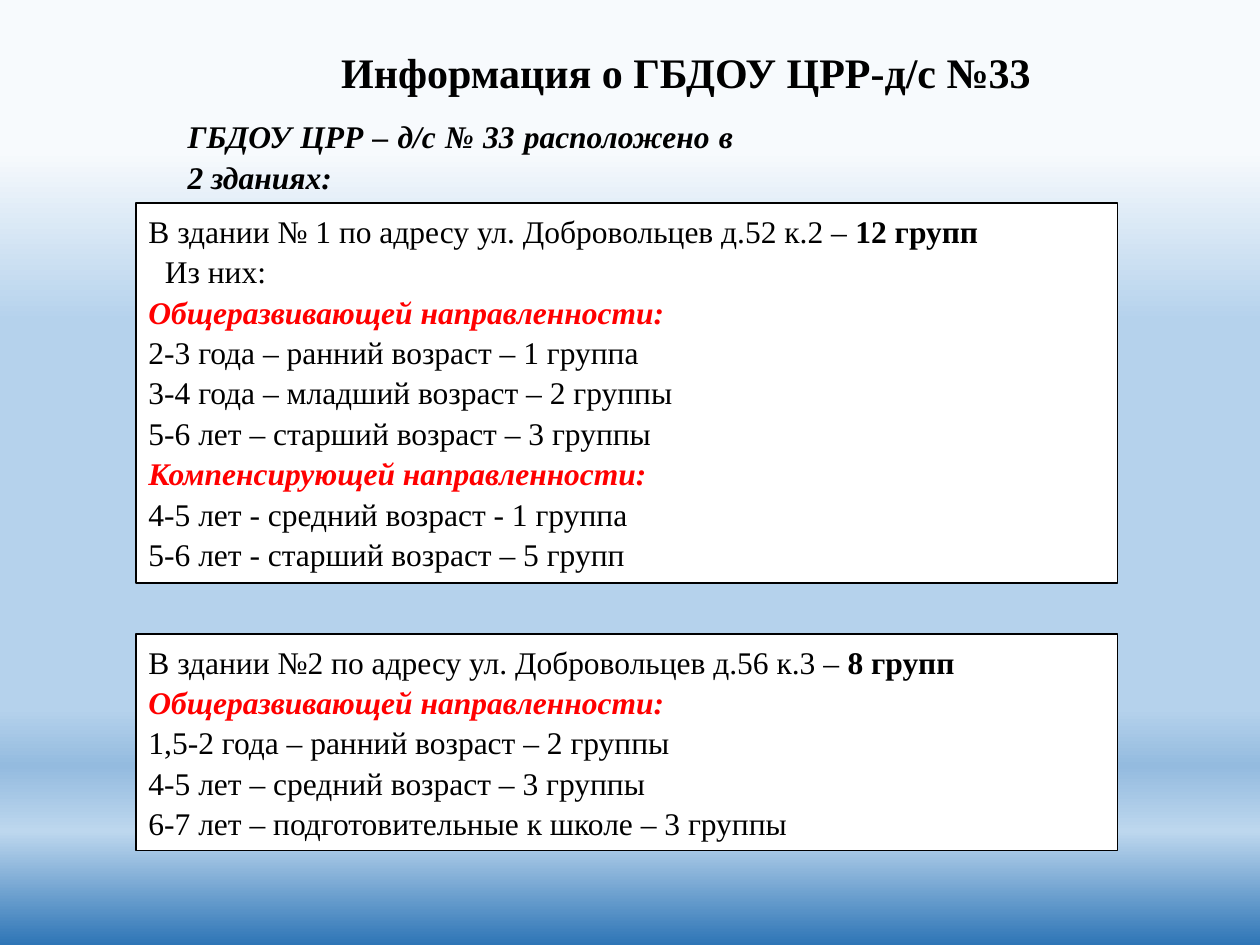
import copy
from dataclasses import dataclass

import pptx
import pptx.dml.color
import pptx.enum.shapes
import pptx.enum.text
import pptx.oxml.ns
import pptx.util

ALIGN = pptx.enum.text.PP_ALIGN


@dataclass(frozen=True)
class Theme:
    font: str = "Times New Roman"
    title: int = 24
    body: int = 18
    spacing: float = 1.07
    ink: str = "000000"
    accent: str = "FF0000"
    paper: str = "FFFFFF"
    sky: tuple = ((16, "F7FAFD"), (34, "B5D2EC"), (75, "B5D2EC"),
                  (81, "94BBDF"), (88, "BDD7EE"), (100, "2E75B6"))


THEME = Theme()
COLS, ROWS = 100, 75

prs = pptx.Presentation()
prs.slide_width = pptx.util.Inches(10)
prs.slide_height = pptx.util.Inches(7.5)


def grid(col, row, cols, rows):
    """Turn grid columns and rows into slide lengths."""
    cw, rh = prs.slide_width / COLS, prs.slide_height / ROWS
    return [round(v) for v in (col * cw, row * rh, cols * cw, rows * rh)]


def rgb(value):
    return pptx.dml.color.RGBColor.from_string(value)


def add_text(p, text, size=THEME.body, color=THEME.ink, bold=False, italic=False):
    r = p.add_run()
    r.text = text
    r.font.name, r.font.size = THEME.font, pptx.util.Pt(size)
    r.font.bold, r.font.italic = bold, italic
    r.font.color.rgb = rgb(color)


def format_paragraph(p, align=ALIGN.LEFT, left=0, right=0):
    p.alignment = align
    p.line_spacing = THEME.spacing
    pPr = p._p.get_or_add_pPr()
    pPr.set("marL", str(pptx.util.Inches(left)))
    pPr.set("marR", str(pptx.util.Inches(right)))


def set_frame(sp, wrap=True):
    tf = sp.text_frame
    tf.word_wrap = wrap
    tf.auto_size = pptx.enum.text.MSO_AUTO_SIZE.SHAPE_TO_FIT_TEXT
    tf.vertical_anchor = pptx.enum.text.MSO_ANCHOR.TOP
    return tf


def add_background(s):
    fill = s.background.fill
    fill.gradient()
    fill.gradient_angle = 270
    stops = s.element.find(".//" + pptx.oxml.ns.qn("a:gsLst"))
    # One more stop element for each colour beyond the default two
    while len(stops) < len(THEME.sky):
        stops.append(copy.deepcopy(stops[0]))
    for stop, (position, color) in zip(fill.gradient_stops, THEME.sky):
        stop.position = position / 100
        stop.color.rgb = rgb(color)


def add_title(s, box, text):
    tf = set_frame(s.shapes.add_textbox(*box), wrap=False)
    add_text(tf.paragraphs[0], text, size=THEME.title, bold=True)


def add_intro(s, box, text):
    p = set_frame(s.shapes.add_textbox(*box)).paragraphs[0]
    format_paragraph(p, ALIGN.JUSTIFY, right=0.47)
    add_text(p, text, bold=True, italic=True)


def add_building(s, box, address, total, lines, align):
    """Framed list: address with its total, then headings (ending in ':') and groups."""
    sp = s.shapes.add_shape(pptx.enum.shapes.MSO_SHAPE.RECTANGLE, *box)
    sp.shadow.inherit = False
    sp.fill.solid()
    sp.fill.fore_color.rgb = rgb(THEME.paper)
    sp.line.color.rgb = rgb(THEME.ink)
    sp.line.width = pptx.util.Pt(1)
    tf = set_frame(sp)

    # Address line
    p = tf.paragraphs[0]
    format_paragraph(p, align)
    add_text(p, address + " – ")
    add_text(p, total, bold=True)

    # Headings and age groups
    for line in lines:
        p = tf.add_paragraph()
        lead_in = line == "Из них:"
        heading = line.endswith(":") and not lead_in
        format_paragraph(p, align, left=0.13 if lead_in else 0)
        add_text(p, line, color=THEME.accent if heading else THEME.ink,
                 bold=heading, italic=heading)


def main():
    s = prs.slides.add_slide(prs.slide_layouts[6])
    add_background(s)
    add_title(s, grid(26.1, 3.2, 57.3, 5), "Информация о ГБДОУ ЦРР-д/с №33")
    add_building(
        s, grid(10.8, 16.1, 77.9, 30.2),
        "В здании № 1 по адресу ул. Добровольцев д.52 к.2", "12 групп",
        ["Из них:",
         "Общеразвивающей направленности:",
         "2-3 года – ранний возраст – 1 группа",
         "3-4 года – младший возраст – 2 группы",
         "5-6 лет – старший возраст – 3 группы",
         "Компенсирующей направленности:",
         "4-5 лет - средний возраст - 1 группа",
         "5-6 лет - старший возраст – 5 групп"],
        ALIGN.JUSTIFY)
    add_intro(s, grid(13.9, 8.6, 50, 7.5),
              "ГБДОУ ЦРР – д/с № 33 расположено в 2 зданиях:")
    add_building(
        s, grid(10.8, 50.3, 77.9, 17.2),
        "В здании №2 по адресу ул. Добровольцев д.56 к.3", "8 групп",
        ["Общеразвивающей направленности:",
         "1,5-2 года – ранний возраст – 2 группы",
         "4-5 лет – средний возраст – 3 группы",
         "6-7 лет – подготовительные к школе – 3 группы"],
        ALIGN.LEFT)
    prs.save("out.pptx")


if __name__ == "__main__":
    main()
